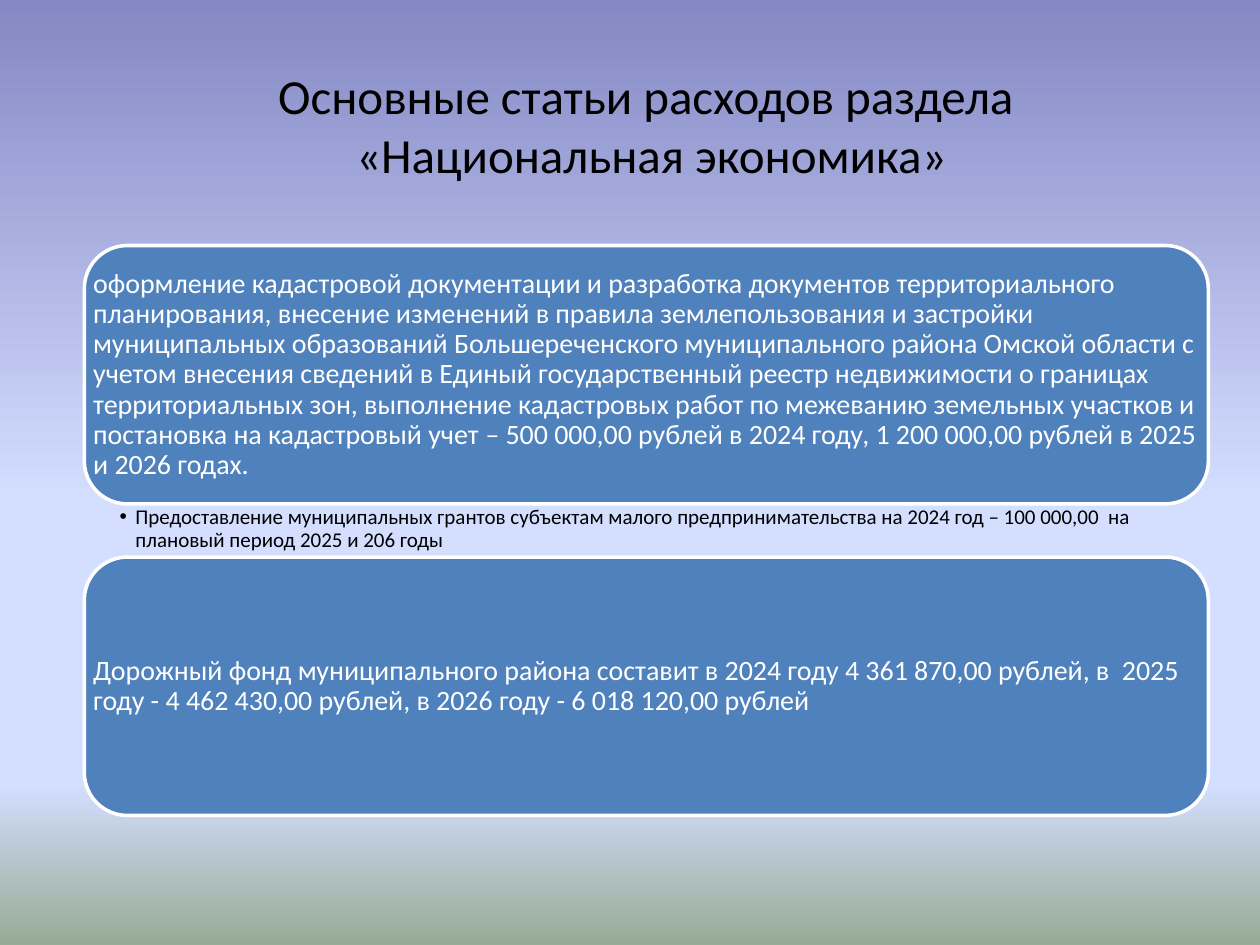
from lxml.etree import SubElement
from pptx import Presentation
from pptx.dml.color import RGBColor
from pptx.enum.shapes import MSO_SHAPE
from pptx.enum.text import MSO_ANCHOR, MSO_AUTO_SIZE, PP_ALIGN
from pptx.oxml.ns import qn
from pptx.util import Cm, Pt

# Content
TITLE = "Основные статьи расходов раздела \n«Национальная экономика»"
CARDS = [
    [("оформление кадастровой документации и разработка документов "
      "территориального планирования, внесение изменений в правила "
      "землепользования и застройки муниципальных образований "
      "Большереченского муниципального района Омской области с учетом "
      "внесения сведений в Единый государственный реестр недвижимости о "
      "границах территориальных зон, выполнение кадастровых работ по "
      "межеванию земельных участков и постановка на кадастровый учет", False),
     (" – ", True),
     ("500 000,00 рублей в 2024 году, 1 200 000,00 рублей в 2025 "
      "и 2026 годах.", False)],
    [("Дорожный фонд муниципального района составит в 2024 году "
      "4 361 870,00 рублей, в  2025 году - 4 462 430,00 рублей, "
      "в 2026 году - 6 018 120,00 рублей", False)],
]
NOTE = [("Предоставление муниципальных грантов субъектам малого "
         "предпринимательства на 2024 год – 100 000,00  на плановый период "
         "2025 и 206 годы", False)]

# Format values
SKY = [(0, "8488C4"), (53, "D4DEFF"), (83, "D4DEFF"), (100, "96AB94")]
BLUE, WHITE, BLACK = "4F81BD", "FFFFFF", "000000"
LEFT, TOP, WIDTH, CARD_H, GAP = 1.7, 4.95, 22.66, 5.21, 1.07
CARD_PAD, NOTE_PAD = (0.18,) * 4, (0.71, 0.05, 0.3, 0.05)
SIDES = ("left", "top", "right", "bottom")


def color(code):
    return RGBColor.from_string(code)


def put(obj, vals):
    for name, val in vals.items():
        setattr(obj, name, val)


def place(shape, *box):
    put(shape, dict(zip(("left", "top", "width", "height"), map(Cm, box))))


def style(font, size, code):
    put(font, {"name": "Calibri", "size": Pt(size)})
    font.color.rgb = color(code)


def write(shape, runs, size, code, pad, anchor):
    frame = shape.text_frame
    put(frame, {"word_wrap": True, "auto_size": MSO_AUTO_SIZE.NONE,
                "vertical_anchor": anchor})
    put(frame, {f"margin_{s}": Cm(v) for s, v in zip(SIDES, pad)})
    para = frame.paragraphs[0]
    put(para, {"alignment": PP_ALIGN.LEFT, "line_spacing": 0.9,
               "space_before": Pt(0)})
    for text, slant in runs:
        run = para.add_run()
        run.text = text
        style(run.font, size, code)
        run.font.italic = slant
    return para


def paint(slide):
    fill = slide.background.fill
    fill.gradient()
    fill.gradient_angle = 270
    stops = slide.background._cSld.find(".//" + qn("a:gsLst"))
    for stop in list(stops):
        stops.remove(stop)
    for pos, code in SKY:
        stop = SubElement(stops, qn("a:gs"), pos=str(pos * 1000))
        SubElement(stop, qn("a:srgbClr"), val=code)


def card(slide, runs, top):
    box = [Cm(v) for v in (LEFT, top, WIDTH, CARD_H)]
    panel = slide.shapes.add_shape(MSO_SHAPE.ROUNDED_RECTANGLE, *box)
    panel.shadow.inherit = False
    panel.fill.solid()
    panel.fill.fore_color.rgb = color(BLUE)
    panel.line.color.rgb = color(WHITE)
    panel.line.width = Pt(2)
    label = slide.shapes.add_textbox(*box)
    write(label, runs, 16, WHITE, CARD_PAD, MSO_ANCHOR.MIDDLE)


def main():
    deck = Presentation()
    put(deck, {"slide_width": Cm(25.4), "slide_height": Cm(19.05)})
    slide = deck.slides.add_slide(deck.slide_layouts[1])
    paint(slide)

    # Title
    title = slide.shapes.title
    place(title, LEFT, 0.91, 22.86, 3.18)
    frame = title.text_frame
    put(frame, {"auto_size": MSO_AUTO_SIZE.NONE,
                "vertical_anchor": MSO_ANCHOR.MIDDLE})
    para = frame.paragraphs[0]
    para.text = TITLE
    para.alignment = PP_ALIGN.CENTER
    for run in para.runs:
        style(run.font, 28, BLACK)

    # Cards, one below the other
    for i, runs in enumerate(CARDS):
        card(slide, runs, TOP + i * (CARD_H + GAP))

    # Bulleted note in the gap
    note = slide.placeholders[1]
    place(note, LEFT, TOP + CARD_H, WIDTH, GAP)
    para = write(note, NOTE, 12, BLACK, NOTE_PAD, MSO_ANCHOR.TOP)
    para.level = 1
    props = para._p.get_or_add_pPr()
    for key, val in (("marL", Cm(0.32)), ("indent", -Cm(0.32))):
        props.set(key, str(int(val)))
    SubElement(props, qn("a:buChar"), char="•")

    deck.save("out.pptx")


if __name__ == "__main__":
    main()
